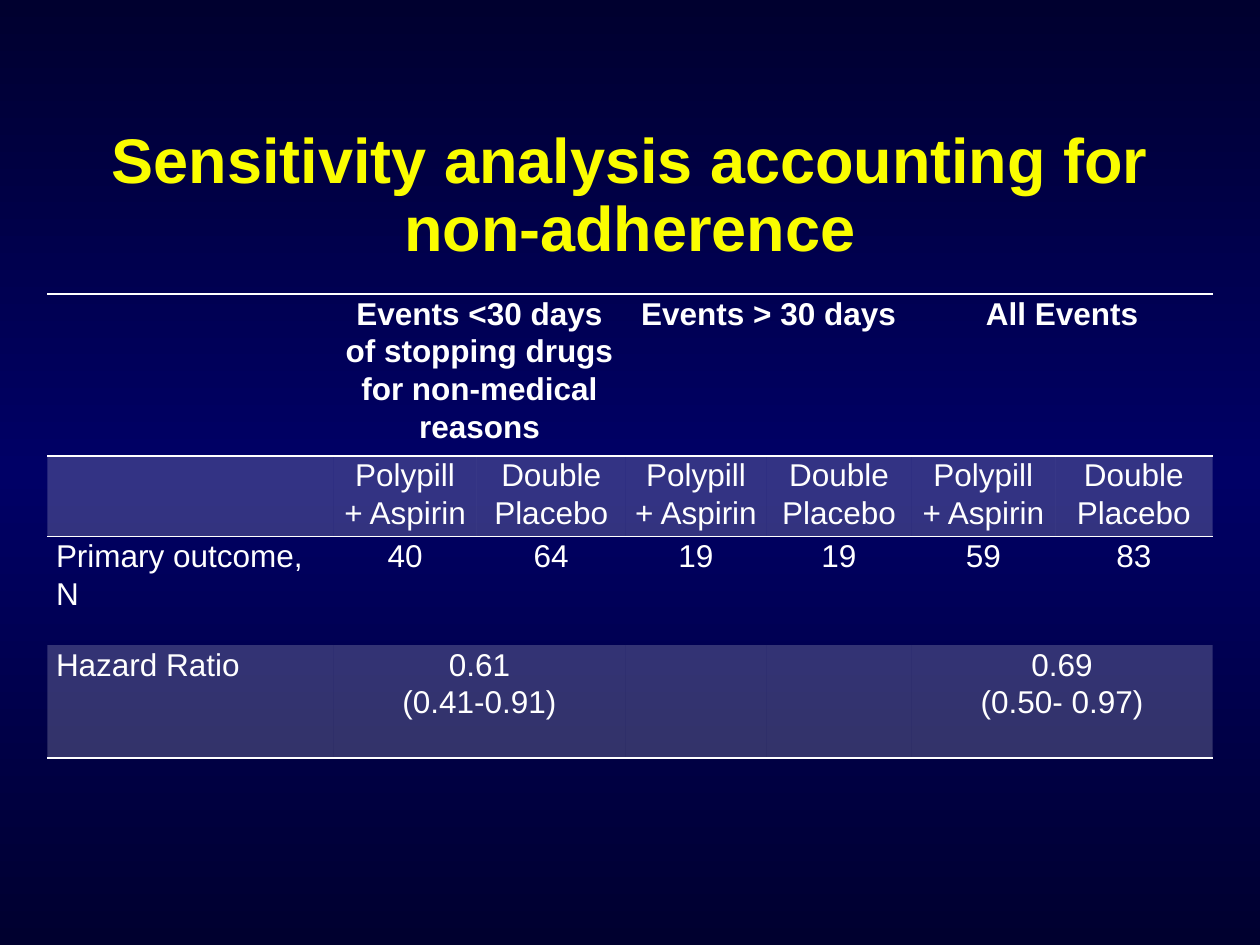
from dataclasses import dataclass

from lxml.etree import SubElement
from pptx import Presentation
from pptx.dml.color import RGBColor
from pptx.enum.text import MSO_ANCHOR, PP_ALIGN
from pptx.oxml import parse_xml
from pptx.oxml.ns import nsdecls, qn
from pptx.util import Pt


@dataclass(frozen=True)
class Theme:
    font: str = "Arial"
    title_size: float = 36
    table_size: float = 18
    title: str = "FAFD00"
    text: str = "FFFFFF"
    edge: str = "00002F"
    middle: str = "000066"
    band_opacity: int = 20
    rule_width: float = 1


THEME = Theme()
TITLE = "Sensitivity analysis accounting for non-adherence"
ARMS = ["Polypill + Aspirin", "Double Placebo"]
ROWS = [
    ["", "Events <30 days of stopping drugs for non-medical reasons", "",
     "Events > 30 days", "", "All Events", ""],
    ["", *ARMS * 3],
    ["Primary outcome, N", "40", "64", "19", "19", "59", "83"],
    ["Hazard Ratio", "0.61\n(0.41-0.91)", "", "", "", "0.69\n(0.50- 0.97)", ""],
]
MERGED_PAIRS = [(0, 1), (0, 3), (0, 5), (3, 1), (3, 5)]
BANDED_ROWS = {1, 3}
ROW_RULES = {0: ("lnT", "lnB"), 1: ("lnT",), 3: ("lnB",)}
COLUMN_WIDTHS = [163.5, 82, 85, 80.5, 83, 82, 90]
ROW_HEIGHTS = [86, 43, 62, 64.5]
NO_GRID_STYLE = "{2D5ABB26-0587-4C30-8999-92F81FD0307C}"


def style_paragraph(paragraph, size, color, bold, align, spacing):
    paragraph.alignment = align
    paragraph.line_spacing = spacing
    paragraph.font.name = THEME.font
    paragraph.font.size = Pt(size)
    paragraph.font.bold = bold
    paragraph.font.color.rgb = RGBColor.from_string(color)


def paint_background(slide):
    fill = slide.background.fill
    fill.gradient()
    fill.gradient_angle = 270
    stops = slide.element.find(".//" + qn("a:gsLst"))
    for stop in list(stops):
        stops.remove(stop)
    for percent, color in [(0, THEME.edge), (50, THEME.middle), (100, THEME.edge)]:
        stop = SubElement(stops, qn("a:gs"), pos=str(percent * 1000))
        SubElement(stop, qn("a:srgbClr"), val=color)


def add_title(slide):
    box = slide.shapes.add_textbox(Pt(45), Pt(69), Pt(630), Pt(86))
    frame = box.text_frame
    frame.word_wrap = True
    frame.vertical_anchor = MSO_ANCHOR.BOTTOM
    frame.text = TITLE
    style_paragraph(frame.paragraphs[0], THEME.title_size, THEME.title, True,
                    PP_ALIGN.CENTER, 0.9)


def add_rule(cell, side):
    cell._tc.get_or_add_tcPr().append(parse_xml(
        f'<a:{side} {nsdecls("a")} w="{Pt(THEME.rule_width)}"><a:solidFill>'
        f'<a:srgbClr val="{THEME.text}"/></a:solidFill></a:{side}>'))


def fill_cell(cell, row, column, text):
    cell.margin_left = cell.margin_right = Pt(5)
    cell.margin_top = cell.margin_bottom = 0
    for side in ROW_RULES.get(row, ()):
        add_rule(cell, side)
    if row in BANDED_ROWS:
        cell.fill.solid()
        cell.fill.fore_color.rgb = RGBColor.from_string(THEME.text)
        color = cell._tc.tcPr.find(qn("a:solidFill"))[0]
        SubElement(color, qn("a:alpha"), val=str(THEME.band_opacity * 1000))
    else:
        cell.fill.background()
    cell.text = text
    align = PP_ALIGN.CENTER if column else PP_ALIGN.LEFT
    for paragraph in cell.text_frame.paragraphs:
        style_paragraph(paragraph, THEME.table_size, THEME.text, row == 0, align, 1.07)


def add_results(slide):
    table = slide.shapes.add_table(
        len(ROWS), len(COLUMN_WIDTHS), Pt(27), Pt(168),
        Pt(sum(COLUMN_WIDTHS)), Pt(sum(ROW_HEIGHTS))).table
    table.first_row = table.horz_banding = False
    table._tbl.tblPr.find(qn("a:tableStyleId")).text = NO_GRID_STYLE
    for column, width in zip(table.columns, COLUMN_WIDTHS):
        column.width = Pt(width)
    for row, height in zip(table.rows, ROW_HEIGHTS):
        row.height = Pt(height)
    for row, texts in enumerate(ROWS):
        for column, text in enumerate(texts):
            fill_cell(table.cell(row, column), row, column, text)
    for row, column in MERGED_PAIRS:
        table.cell(row, column).merge(table.cell(row, column + 1))


def main():
    """Build the sensitivity analysis slide."""
    presentation = Presentation()
    presentation.slide_width, presentation.slide_height = Pt(720), Pt(540)
    slide = presentation.slides.add_slide(presentation.slide_layouts[6])
    paint_background(slide)
    add_title(slide)
    add_results(slide)
    presentation.save("out.pptx")


if __name__ == "__main__":
    main()
